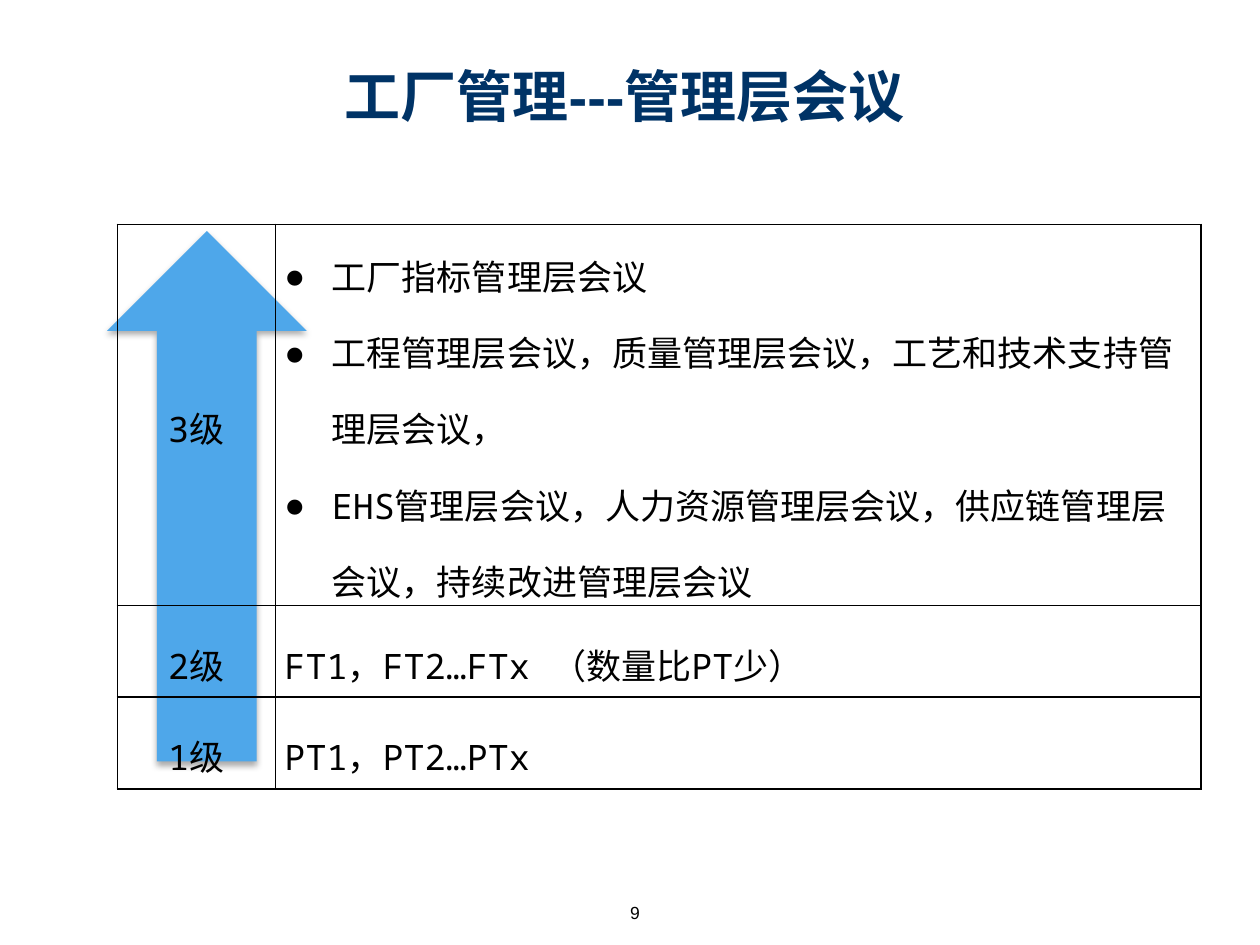
from dataclasses import dataclass

from lxml import etree
from pptx import Presentation
from pptx.dml.color import RGBColor
from pptx.enum.lang import MSO_LANGUAGE_ID
from pptx.enum.shapes import MSO_SHAPE
from pptx.enum.text import MSO_ANCHOR, PP_ALIGN
from pptx.oxml.ns import qn
from pptx.util import Pt

ARROW = MSO_SHAPE.UP_ARROW
MIDDLE = MSO_ANCHOR.MIDDLE
LEFT, CENTER = PP_ALIGN.LEFT, PP_ALIGN.CENTER
CHINESE = MSO_LANGUAGE_ID.SIMPLIFIED_CHINESE


@dataclass(frozen=True)
class Theme:
    navy: str = "003366"
    black: str = "000000"
    blue: str = "4EA7EA"
    sans: str = "Arial"
    mono: str = "Noto Sans Mono"
    title: int = 32
    body: int = 20
    small: int = 10
    border: int = 1


@dataclass(frozen=True)
class Box:
    left: float
    top: float
    width: float
    height: float

    def place(self) -> tuple:
        return Pt(self.left), Pt(self.top), Pt(self.width), Pt(self.height)


@dataclass(frozen=True)
class Level:
    label: str
    lines: tuple
    height: float
    listed: bool = False


THEME = Theme()
COLUMNS = (90.3, 529)
LEVELS = (
    Level("3级", (
        "工厂指标管理层会议",
        "工程管理层会议，质量管理层会议，工艺和技术支持管理层会议，",
        "EHS管理层会议，人力资源管理层会议，供应链管理层会议，持续改进管理层会议",
    ), 217.8, True),
    Level("2级", ("FT1，FT2…FTx （数量比PT少）",), 52.4),
    Level("1级", ("PT1，PT2…PTx",), 52.4),
)


def add_run(para, text: str, face: str, size: int, color: str, bold=False) -> None:
    run = para.add_run()
    run.text = text
    font = run.font
    font.name, font.size, font.bold = face, Pt(size), bold
    font.color.rgb = RGBColor.from_string(color)
    font.language_id = CHINESE


def add_mark(para) -> None:
    props = para._p.get_or_add_pPr()
    props.set("marL", str(Pt(27)))
    props.set("indent", str(-Pt(27)))
    etree.SubElement(props, qn("a:buFont"), typeface=THEME.mono)
    etree.SubElement(props, qn("a:buChar"), char="●")


def add_edges(cell) -> None:
    props = cell._tc.get_or_add_tcPr()
    for side in ("lnL", "lnR", "lnT", "lnB"):
        line = etree.SubElement(props, qn(f"a:{side}"), w=str(Pt(THEME.border)))
        fill = etree.SubElement(line, qn("a:solidFill"))
        etree.SubElement(fill, qn("a:srgbClr"), val=THEME.black)


def fill_cell(cell, lines: tuple, align, listed=False) -> None:
    add_edges(cell)
    cell.fill.background()
    cell.vertical_anchor = MIDDLE
    cell.margin_left = cell.margin_right = Pt(5.3)
    cell.margin_top = cell.margin_bottom = Pt(0)
    frame = cell.text_frame
    for place, text in enumerate(lines):
        para = frame.add_paragraph() if place else frame.paragraphs[0]
        if listed:
            add_mark(para)
        para.alignment = align
        para.line_spacing = 1.5
        add_run(para, text, THEME.mono, THEME.body, THEME.black)


def add_levels(slide, box: Box) -> None:
    table = slide.shapes.add_table(len(LEVELS), len(COLUMNS), *box.place()).table
    table.first_row = table.horz_banding = False
    for column, width in zip(table.columns, COLUMNS):
        column.width = Pt(width)
    for place, level in enumerate(LEVELS):
        table.rows[place].height = Pt(level.height)
        fill_cell(table.cell(place, 0), (level.label,), CENTER)
        fill_cell(table.cell(place, 1), level.lines, LEFT, level.listed)


def add_arrow(slide, box: Box) -> None:
    arrow = slide.shapes.add_shape(ARROW, *box.place())
    arrow.fill.solid()
    arrow.fill.fore_color.rgb = RGBColor.from_string(THEME.blue)
    arrow.line.fill.background()
    arrow.shadow.inherit = False
    effects = arrow._element.spPr.find(qn("a:effectLst"))
    shade = etree.SubElement(effects, qn("a:outerShdw"), blurRad=str(Pt(3.5)),
                             dist=str(Pt(2.2)), dir="5400000", rotWithShape="0")
    color = etree.SubElement(shade, qn("a:srgbClr"), val=THEME.black)
    etree.SubElement(color, qn("a:alpha"), val="32000")


def add_title(slide, box: Box) -> None:
    title = slide.shapes.title
    title.left, title.top, title.width, title.height = box.place()
    frame = title.text_frame
    frame.vertical_anchor = MIDDLE
    para = frame.paragraphs[0]
    para.alignment = CENTER
    add_run(para, "工厂管理---管理层会议", THEME.sans, THEME.title, THEME.navy, True)


def add_number(slide, box: Box) -> None:
    frame = slide.shapes.add_textbox(*box.place()).text_frame
    frame.word_wrap = True
    para = frame.paragraphs[0]
    para.alignment = CENTER
    add_run(para, "9", THEME.sans, THEME.small, THEME.black)


def main() -> None:
    deck = Presentation()
    deck.slide_width, deck.slide_height = Pt(720), Pt(540)
    slide = deck.slides.add_slide(deck.slide_layouts[5])
    add_arrow(slide, Box(61.2, 132, 114, 303))
    add_title(slide, Box(78, 35.3, 558, 38.2))
    add_number(slide, Box(329.8, 512, 66.2, 20.9))
    add_levels(slide, Box(67, 128.2, sum(COLUMNS), sum(level.height for level in LEVELS)))
    deck.save("out.pptx")


if __name__ == "__main__":
    main()
